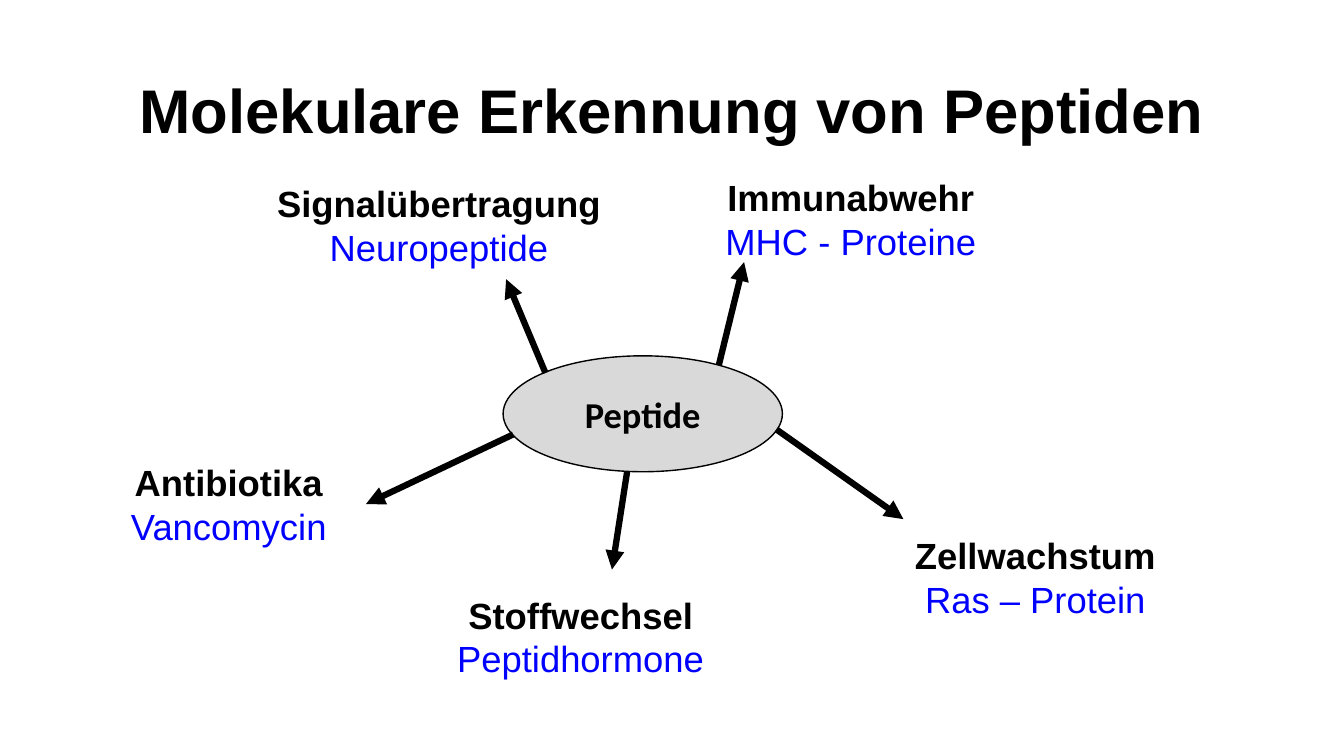
from dataclasses import dataclass

from lxml import etree
from pptx import Presentation
from pptx import util as u
from pptx.dml.color import RGBColor
from pptx.enum import shapes, text
from pptx.oxml import ns

COLOURS = {"ink": "000000", "example": "0000FF", "core": "D9D9D9"}
LABEL_HEIGHT = 0.98


@dataclass
class Topic:
    heading: str
    example: str
    left: float
    top: float
    width: float
    arrow_start: tuple[float, float]
    arrow_end: tuple[float, float]


TOPICS = [
    Topic("Signalübertragung", "Neuropeptide", 2.63, 1.75, 3.45, (5.41, 3.7), (5.02, 2.77)),
    Topic("Immunabwehr", "MHC - Proteine", 7.03, 1.69, 2.82, (7.13, 3.62), (7.38, 2.6)),
    Topic("Zellwachstum", "Ras – Protein", 8.96, 5.24, 2.62, (7.7, 4.26), (8.96, 5.15)),
    Topic("Stoffwechsel", "Peptidhormone", 4.42, 5.83, 2.68, (6.22, 4.68), (6.07, 5.65)),
    Topic("Antibiotika", "Vancomycin", 1.19, 4.52, 2.16, (5.09, 4.31), (3.63, 5)),
]


def colour(name: str) -> RGBColor:
    return RGBColor.from_string(COLOURS[name])


def add_span(para, words: str, size: float = 26, font: str = "Arial",
             ink: str = "ink", bold: bool = True) -> None:
    para.alignment = text.PP_ALIGN.CENTER
    span = para.add_run()
    span.text = words
    span.font.size = u.Pt(size)
    span.font.name = font
    span.font.bold = bold
    span.font.color.rgb = colour(ink)


def add_title(page, words: str) -> None:
    box = page.shapes.add_textbox(u.Inches(0.92), u.Inches(0.4), u.Inches(11.5), u.Inches(1.45))
    frame = box.text_frame
    frame.word_wrap = True
    frame.vertical_anchor = text.MSO_ANCHOR.MIDDLE
    frame.paragraphs[0].line_spacing = 0.9
    add_span(frame.paragraphs[0], words, size=44)


def add_core(page, words: str) -> None:
    core = page.shapes.add_shape(shapes.MSO_SHAPE.OVAL, u.Inches(4.99), u.Inches(3.53),
                                 u.Inches(2.77), u.Inches(1.15))
    core.shadow.inherit = False
    core.fill.solid()
    core.fill.fore_color.rgb = colour("core")
    core.line.color.rgb = colour("ink")
    core.line.width = u.Pt(1)
    core.text_frame.vertical_anchor = text.MSO_ANCHOR.MIDDLE
    add_span(core.text_frame.paragraphs[0], words, font="Calibri")


def add_arrow(page, topic: Topic) -> None:
    ends = [u.Inches(value) for value in topic.arrow_start + topic.arrow_end]
    arrow = page.shapes.add_connector(shapes.MSO_CONNECTOR.STRAIGHT, *ends)
    arrow.line.color.rgb = colour("ink")
    arrow.line.width = u.Pt(4.5)
    # Arrowhead at the topic end, and no theme shadow
    etree.SubElement(arrow.line._get_or_add_ln(), ns.qn("a:tailEnd"), type="triangle")
    etree.SubElement(arrow._element.spPr, ns.qn("a:effectLst"))


def add_label(page, topic: Topic) -> None:
    box = page.shapes.add_textbox(u.Inches(topic.left), u.Inches(topic.top),
                                  u.Inches(topic.width), u.Inches(LABEL_HEIGHT))
    frame = box.text_frame
    frame.word_wrap = False
    frame.auto_size = text.MSO_AUTO_SIZE.SHAPE_TO_FIT_TEXT
    add_span(frame.paragraphs[0], topic.heading)
    add_span(frame.add_paragraph(), topic.example, ink="example", bold=False)


def main() -> None:
    deck = Presentation()
    deck.slide_width = u.Inches(13.33)
    deck.slide_height = u.Inches(7.5)
    page = deck.slides.add_slide(deck.slide_layouts[6])

    # Title and centre
    add_title(page, "Molekulare Erkennung von Peptiden")
    add_core(page, "Peptide")

    # Topics around the centre
    for topic in TOPICS:
        add_arrow(page, topic)
        add_label(page, topic)

    deck.save("out.pptx")


if __name__ == "__main__":
    main()
